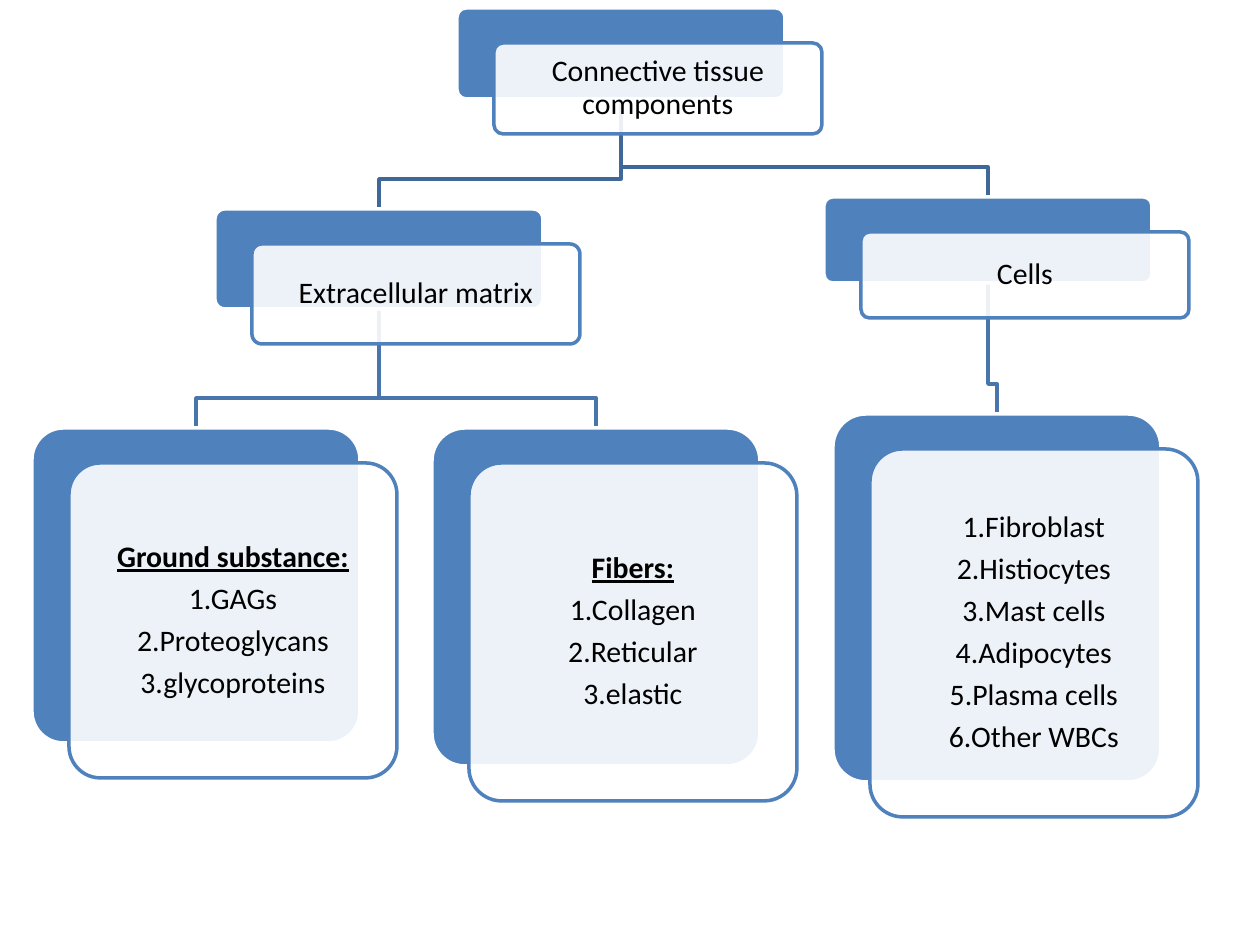
from dataclasses import dataclass

from lxml import etree
from pptx import Presentation
from pptx.dml.color import RGBColor
from pptx.enum.shapes import MSO_SHAPE
from pptx.enum.text import MSO_ANCHOR, PP_ALIGN
from pptx.oxml.ns import qn
from pptx.util import Pt

ROUNDED = MSO_SHAPE.ROUNDED_RECTANGLE
MIDDLE = MSO_ANCHOR.MIDDLE
CENTER = PP_ALIGN.CENTER
PX_PER_INCH = 126
BOX_WIDTH = 328
PANEL_SHIFT = (37, 35)
BEND_ABOVE_CHILD = 30


def px(length):
    return round(length * 914400 / PX_PER_INCH)


def color(hex_string):
    return RGBColor.from_string(hex_string)


@dataclass
class Node:
    left: int
    top: int
    height: int
    lines: list
    heading: bool = False

    @property
    def center(self):
        return self.left + BOX_WIDTH // 2

    @property
    def bottom(self):
        return self.top + self.height


class Chart:
    """Draws a hierarchy of layered boxes on one slide."""

    font = "Calibri"
    size = Pt(17)
    blue = "4F81BD"
    white = "FFFFFF"
    black = "000000"
    line_width = Pt(2)

    def __init__(self, slide):
        self.slide = slide

    def outline(self, shape, line):
        shape.shadow.inherit = False
        shape.line.color.rgb = color(line)
        shape.line.width = self.line_width

    def branch(self, parent, child, line):
        bend = child.top - BEND_ABOVE_CHILD
        builder = self.slide.shapes.build_freeform(parent.center, parent.bottom, scale=px(1))
        builder.add_line_segments(
            [(parent.center, bend), (child.center, bend), (child.center, child.top)],
            close=False,
        )
        shape = builder.convert_to_shape()
        shape.fill.background()
        self.outline(shape, line)

    def rounded_box(self, left, top, height, fill, line):
        shape = self.slide.shapes.add_shape(ROUNDED, px(left), px(top), px(BOX_WIDTH), px(height))
        shape.adjustments[0] = 0.1
        shape.fill.solid()
        shape.fill.fore_color.rgb = color(fill)
        self.outline(shape, line)
        return shape

    def node(self, node):
        """Draw a blue backing and a translucent panel with the text."""
        self.rounded_box(node.left, node.top, node.height, self.blue, self.white)
        shift_x, shift_y = PANEL_SHIFT
        panel = self.rounded_box(
            node.left + shift_x, node.top + shift_y, node.height, self.white, self.blue
        )
        fill_color = panel.fill._xPr.find(qn("a:solidFill"))[0]
        etree.SubElement(fill_color, qn("a:alpha"), val="90000")
        self.text(panel.text_frame, node)

    def text(self, frame, node):
        frame.text = "\n".join(node.lines)
        frame.word_wrap = True
        frame.vertical_anchor = MIDDLE
        frame.margin_left = frame.margin_right = px(9)
        frame.margin_top = frame.margin_bottom = px(9)
        for index, paragraph in enumerate(frame.paragraphs):
            paragraph.alignment = CENTER
            paragraph.line_spacing = 0.9
            paragraph.space_after = Pt(5.6)
            for run in paragraph.runs:
                run.font.name = self.font
                run.font.size = self.size
                run.font.color.rgb = color(self.black)
                run.font.bold = run.font.underline = node.heading and index == 0


def main():
    presentation = Presentation()
    presentation.slide_width = px(1260)
    presentation.slide_height = px(945)
    chart = Chart(presentation.slides.add_slide(presentation.slide_layouts[6]))

    root = Node(457, 8, 91, ["Connective tissue components"])
    matrix = Node(215, 209, 100, ["Extracellular matrix"])
    ground = Node(
        32, 428, 315,
        ["Ground substance:", "1.GAGs", "2.Proteoglycans", "3.glycoproteins"],
        heading=True,
    )
    fibers = Node(
        432, 428, 338,
        ["Fibers:", "1.Collagen", "2.Reticular", "3.elastic"],
        heading=True,
    )
    cells = Node(824, 197, 86, ["Cells"])
    cell_types = Node(
        833, 414, 368,
        ["1.Fibroblast", "2.Histiocytes", "3.Mast cells",
         "4.Adipocytes", "5.Plasma cells", "6.Other WBCs"],
    )

    upper_line, lower_line = "3F6797", "4875AC"
    for parent, child, line in [
        (cells, cell_types, lower_line),
        (root, cells, upper_line),
        (matrix, fibers, lower_line),
        (matrix, ground, lower_line),
        (root, matrix, upper_line),
    ]:
        chart.branch(parent, child, line)
    for node in (root, matrix, ground, fibers, cells, cell_types):
        chart.node(node)

    presentation.save("out.pptx")


if __name__ == "__main__":
    main()
